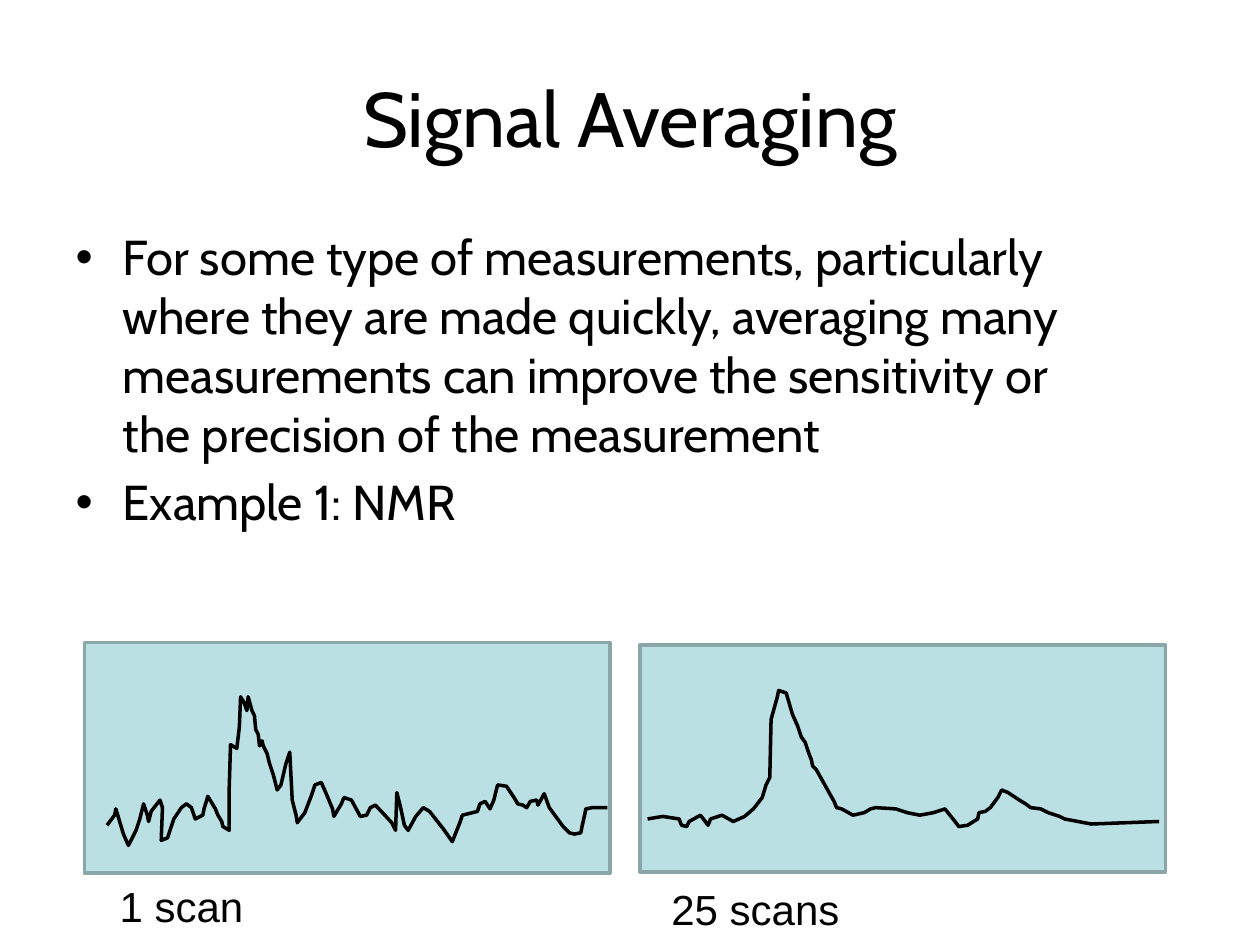
from pptx import Presentation
from pptx.dml.color import RGBColor
from pptx.enum.shapes import MSO_SHAPE
from pptx.enum.text import MSO_ANCHOR, MSO_AUTO_SIZE, PP_ALIGN
from pptx.util import Pt

PX = 9144  # EMU per px, at 100 px to the inch
BLACK = RGBColor(0x00, 0x00, 0x00)
PANEL_FILL = RGBColor(0xBB, 0xE0, 0xE3)
PANEL_LINE = RGBColor(0x8A, 0xA6, 0xA8)
TEXT_FONT = "Cabin"
LABEL_FONT = "Arial"

BULLETS = [
    "For some type of measurements, particularly where they are made quickly, "
    "averaging many measurements can improve the sensitivity or the precision "
    "of the measurement",
    "Example 1: NMR",
]

NOISY_SIGNAL = [
    (85, 655), (91, 647), (92, 642), (95, 652), (98, 662), (102, 671),
    (108, 659), (111, 650), (114, 638), (117, 647), (118, 652), (120, 644),
    (127, 635), (129, 641), (128, 667), (133, 665), (136, 656), (138, 650),
    (144, 641), (148, 638), (152, 641), (155, 650), (161, 647), (162, 642),
    (165, 632), (171, 642), (173, 647), (176, 652), (177, 656), (182, 659),
    (182, 625), (183, 591), (188, 594), (190, 577), (191, 553), (194, 558),
    (196, 564), (197, 553), (200, 564), (202, 568), (203, 579), (205, 583),
    (206, 592), (208, 588), (209, 592), (212, 598), (214, 606), (217, 615),
    (220, 627), (223, 623), (227, 606), (230, 597), (232, 635), (233, 639),
    (235, 647), (236, 653), (242, 645), (247, 632), (250, 623), (255, 621),
    (259, 630), (264, 642), (265, 648), (271, 638), (273, 633), (279, 635),
    (286, 648), (291, 647), (294, 641), (298, 639), (311, 653), (314, 659),
    (315, 629), (318, 641), (321, 655), (324, 659), (330, 648), (336, 641),
    (341, 644), (352, 658), (359, 668), (365, 653), (367, 647), (379, 644),
    (381, 638), (385, 636), (389, 642), (392, 635), (394, 627), (395, 623),
    (402, 624), (408, 633), (411, 638), (415, 639), (418, 641), (421, 636),
    (426, 635), (427, 639), (432, 630), (436, 641), (447, 656), (452, 661),
    (456, 662), (461, 661), (462, 656), (464, 647), (465, 642), (470, 641),
    (482, 641),
]

AVERAGED_SIGNAL = [
    (514, 650), (526, 648), (539, 650), (541, 655), (545, 656), (547, 652),
    (556, 647), (562, 655), (564, 650), (573, 647), (582, 652), (591, 648),
    (598, 642), (605, 633), (608, 623), (611, 617), (612, 571), (617, 553),
    (618, 548), (624, 550), (629, 567), (633, 576), (636, 585), (639, 589),
    (642, 598), (644, 603), (645, 608), (648, 611), (653, 620), (658, 629),
    (662, 636), (664, 641), (668, 642), (677, 647), (686, 645), (691, 642),
    (695, 641), (711, 642), (720, 645), (730, 647), (741, 645), (750, 642),
    (758, 652), (761, 656), (768, 655), (776, 650), (777, 645), (782, 644),
    (786, 641), (792, 633), (795, 627), (800, 629), (809, 635), (814, 638),
    (818, 641), (826, 642), (832, 645), (841, 648), (845, 650), (866, 654),
    (920, 652),
]


class SlideBuilder:
    """Holds the current slide and the style shared by its elements."""

    def __init__(self, page, line_width=Pt(2)):
        self.page = page
        self.line_width = line_width

    def place(self, shape, left, top, width, height):
        shape.left, shape.top = left * PX, top * PX
        shape.width, shape.height = width * PX, height * PX

    def style_paragraph(self, paragraph, font_name, size):
        font = paragraph.font
        font.name, font.size = font_name, Pt(size)
        font.color.rgb = BLACK

    def outline(self, shape, color):
        shape.shadow.inherit = False
        shape.line.color.rgb = color
        shape.line.width = self.line_width

    def title(self, text, *bounds):
        title = self.page.shapes.title
        self.place(title, *bounds)
        frame = title.text_frame
        frame.text = text
        frame.vertical_anchor = MSO_ANCHOR.MIDDLE
        frame.paragraphs[0].alignment = PP_ALIGN.CENTER
        self.style_paragraph(frame.paragraphs[0], TEXT_FONT, 44)

    def bullets(self, items, *bounds):
        body = self.page.placeholders[1]
        self.place(body, *bounds)
        frame = body.text_frame
        frame.text = "\n".join(items)
        frame.auto_size = MSO_AUTO_SIZE.NONE
        for paragraph in frame.paragraphs:
            self.style_paragraph(paragraph, TEXT_FONT, 28)

    def panel(self, *bounds):
        panel = self.page.shapes.add_shape(MSO_SHAPE.RECTANGLE, 0, 0, 0, 0)
        self.place(panel, *bounds)
        panel.fill.solid()
        panel.fill.fore_color.rgb = PANEL_FILL
        self.outline(panel, PANEL_LINE)

    def trace(self, points):
        start, *rest = points
        builder = self.page.shapes.build_freeform(*start, scale=PX)
        builder.add_line_segments(rest, close=False)
        trace = builder.convert_to_shape()
        trace.fill.background()
        self.outline(trace, BLACK)

    def label(self, text, *bounds):
        box = self.page.shapes.add_textbox(0, 0, 0, 0)
        self.place(box, *bounds)
        frame = box.text_frame
        frame.text = text
        frame.word_wrap = True
        frame.auto_size = MSO_AUTO_SIZE.SHAPE_TO_FIT_TEXT
        self.style_paragraph(frame.paragraphs[0], LABEL_FONT, 24)


def main():
    deck = Presentation()
    deck.slide_width, deck.slide_height = 1000 * PX, 750 * PX
    slide = SlideBuilder(deck.slides.add_slide(deck.slide_layouts[1]))

    slide.title("Signal Averaging", 50, 30, 900, 125)
    slide.bullets(BULLETS, 50, 175, 842, 350)

    slide.panel(67, 510, 417, 183)
    slide.trace(NOISY_SIGNAL)
    slide.label("1 scan", 85, 694, 125, 50)

    slide.panel(508, 512, 417, 180)
    slide.trace(AVERAGED_SIGNAL)
    slide.label("25 scans", 523, 696, 185, 50)

    deck.save("out.pptx")


if __name__ == "__main__":
    main()
